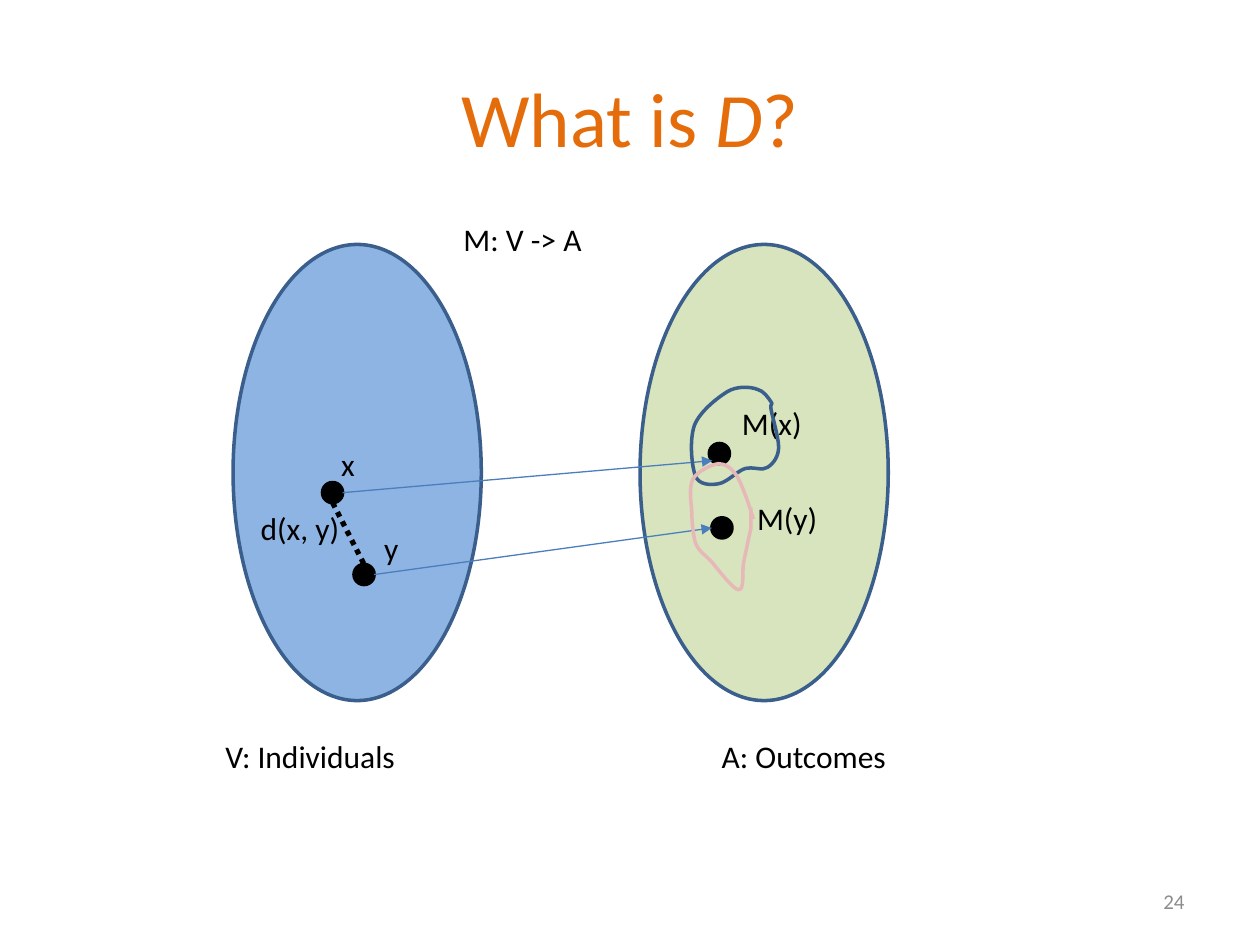
"""Build the slide that maps individuals V to outcomes A."""
import dataclasses

import lxml.etree
import pptx
import pptx.dml.color
import pptx.enum.dml
import pptx.enum.shapes
import pptx.enum.text
import pptx.oxml.ns
import pptx.util

ALIGN = pptx.enum.text.PP_ALIGN
ANCHOR = pptx.enum.text.MSO_ANCHOR
COLUMNS, ROWS = 100, 75
SLIDE_WIDTH, SLIDE_HEIGHT = pptx.util.Inches(10), pptx.util.Inches(7.5)
LABEL_HEIGHT, DOT_SIZE = 4, 1.6

CLOUD_X = [
    (6.9, 11.7),
    (6.1, 12.2), (4.7, 13.3), (4.3, 14.4),
    (3.9, 15.6), (4.1, 17.6), (4.4, 18.4),
    (4.7, 19.1), (5.6, 19.1), (6.2, 19),
    (6.9, 18.9), (7.7, 18), (8.3, 17.8),
    (9, 17.6), (9.7, 18), (10.1, 17.7),
    (10.6, 17.4), (11, 16.8), (11, 16.1),
    (11, 15.3), (10.5, 13.7), (10.4, 13.1),
    (10.3, 12.5), (10.6, 12.8), (10.4, 12.5),
    (10.2, 12.2), (9.8, 11.6), (9.3, 11.5),
    (8.8, 11.3), (7.7, 11.2), (6.9, 11.7),
]
CLOUD_Y = [
    (9, 21.8),
    (8.6, 20.5), (8.1, 19.1), (7.7, 18.4),
    (7.2, 17.7), (6.8, 17.4), (6.2, 17.4),
    (5.6, 17.5), (4.6, 18), (4.2, 18.6),
    (3.9, 19.2), (4, 20.2), (4.1, 21),
    (4.1, 21.9), (4.2, 23), (4.4, 23.7),
    (4.7, 24.4), (5, 24.5), (5.6, 25.1),
    (6.2, 25.8), (7.4, 27.4), (7.8, 27.4),
    (8.3, 27.5), (8.1, 26), (8.2, 25.4),
    (8.3, 24.8), (8.4, 24.4), (8.5, 23.9),
    (8.6, 23.4), (8.7, 23), (8.8, 22.5),
    (8.8, 22), (8.8, 20.9), (8.8, 20.9),
]


@dataclasses.dataclass(frozen=True)
class Theme:
    """Colours, type sizes and line widths of the slide."""
    font: str = "Calibri"
    title: str = "E46C0A"
    ink: str = "000000"
    muted: str = "8C8C8C"
    domain: str = "8EB4E3"
    range: str = "D7E4BD"
    outline: str = "3A5F8C"
    arrow: str = "4B7EBC"
    pink: str = "E6B9B8"
    title_size: float = 44
    label_size: float = 18
    number_size: float = 12
    outline_width: float = 2
    arrow_width: float = 0.75
    distance_width: float = 3


@dataclasses.dataclass(frozen=True)
class Box:
    """A region measured in grid columns and rows."""
    left: float
    top: float
    width: float
    height: float

    def inside(self, left, top, width, height):
        """Return a box offset from this box's corner."""
        return Box(self.left + left, self.top + top, width, height)

    def at(self, across, down):
        """Return the point at the given shares of this box."""
        return self.left + across * self.width, self.top + down * self.height

    def emu(self):
        """Return left, top, width and height in slide units."""
        return *to_emu(self.left, self.top), *to_emu(self.width, self.height)


THEME = Theme()


def to_emu(column, row):
    """Convert a grid position to slide units."""
    return round(column * SLIDE_WIDTH / COLUMNS), round(row * SLIDE_HEIGHT / ROWS)


def rgb(colour):
    """Return a colour object for a hex value."""
    return pptx.dml.color.RGBColor.from_string(colour)


def add_text(slide, box, runs, size=THEME.label_size, colour=THEME.ink,
             align=ALIGN.LEFT, anchor=ANCHOR.TOP):
    """Write (text, italic) runs in one paragraph and return the frame."""
    frame = slide.shapes.add_textbox(*box.emu()).text_frame
    frame.word_wrap = True
    frame.vertical_anchor = anchor
    paragraph = frame.paragraphs[0]
    paragraph.alignment = align
    for text, italic in runs:
        run = paragraph.add_run()
        run.text = text
        run.font.name = THEME.font
        run.font.size = pptx.util.Pt(size)
        run.font.italic = italic
        run.font.color.rgb = rgb(colour)
    return frame


def add_label(slide, region, left, top, width, text):
    """Place a one-line label relative to a region."""
    frame = add_text(slide, region.inside(left, top, width, LABEL_HEIGHT), [(text, False)])
    frame.auto_size = pptx.enum.text.MSO_AUTO_SIZE.SHAPE_TO_FIT_TEXT


def set_line(line, colour, width):
    """Set a line's colour and width."""
    line.color.rgb = rgb(colour)
    line.width = pptx.util.Pt(width)


def add_ellipse(slide, box, fill, outline):
    """Draw a filled ellipse."""
    ellipse = slide.shapes.add_shape(pptx.enum.shapes.MSO_SHAPE.OVAL, *box.emu())
    ellipse.shadow.inherit = False
    ellipse.fill.solid()
    ellipse.fill.fore_color.rgb = rgb(fill)
    set_line(ellipse.line, outline, THEME.outline_width)


def add_line(slide, start, end, colour, width):
    """Draw a straight connector and return it."""
    connector = slide.shapes.add_connector(
        pptx.enum.shapes.MSO_CONNECTOR.STRAIGHT, *to_emu(*start), *to_emu(*end))
    set_line(connector.line, colour, width)
    lxml.etree.SubElement(connector._element.spPr, pptx.oxml.ns.qn("a:effectLst"))
    return connector


def bend_segments(freeform):
    """Turn each three line segments into one cubic Bezier curve."""
    segments = list(freeform._element.iter(pptx.oxml.ns.qn("a:lnTo")))
    for first, second, third in zip(segments[::3], segments[1::3], segments[2::3]):
        curve = lxml.etree.Element(pptx.oxml.ns.qn("a:cubicBezTo"))
        first.addprevious(curve)
        for segment in (first, second, third):
            curve.append(segment[0])
            segment.getparent().remove(segment)


def add_cloud(slide, region, points, colour, close):
    """Draw a curved outline relative to a region."""
    outline = [to_emu(region.left + x, region.top + y) for x, y in points]
    builder = slide.shapes.build_freeform(*outline[0])
    builder.add_line_segments(outline[1:], close=close)
    cloud = builder.convert_to_shape()
    bend_segments(cloud)
    cloud.shadow.inherit = False
    cloud.fill.background()
    set_line(cloud.line, colour, THEME.outline_width)


def add_set(slide, region, fill, dot_corners, labels):
    """Draw a set with its elements and labels, and return the element boxes."""
    add_ellipse(slide, region, fill, THEME.outline)
    dots = [region.inside(*corner, DOT_SIZE, DOT_SIZE) for corner in dot_corners]
    for dot in dots:
        add_ellipse(slide, dot, THEME.ink, THEME.ink)
    for label in labels:
        add_label(slide, region, *label)
    return dots


def add_mapping(slide, sources, arrivals):
    """Draw the arrows from the sources and the distance between them."""
    for source, arrival in zip(sources, arrivals):
        arrow = add_line(slide, source.at(1, 0.5), arrival, THEME.arrow, THEME.arrow_width)
        lxml.etree.SubElement(arrow.line._get_or_add_ln(), pptx.oxml.ns.qn("a:tailEnd"), type="triangle")
    x, y = sources
    distance = add_line(slide, x.at(0.5, 1), y.at(0.5, 0), THEME.ink, THEME.distance_width)
    distance.line.dash_style = pptx.enum.dml.MSO_LINE.ROUND_DOT


def add_diagram(slide, region):
    """Draw both sets and the mapping between them."""
    individuals = region.inside(0, 0, 19.7, region.height)
    outcomes = region.inside(32.3, 0, 19.7, region.height)
    sources = add_set(
        slide, individuals, THEME.domain, [(7.1, 18.9), (9.6, 25.4)],
        [(-1.6, 38.6, 19.7, "V: Individuals"), (7.6, 15.4, 5.5, "x"),
         (11, 22.1, 3.1, "y"), (1.2, 20.5, 14.2, "d(x, y)")])
    m_x, m_y = add_set(
        slide, outcomes, THEME.range, [(5.5, 15.8), (5.7, 21.7)],
        [(5.5, 38.6, 19.7, "A: Outcomes"), (7.1, 12.2, 11.1, "M(x)"),
         (8.3, 19.7, 11.1, "M(y)")])
    add_label(slide, region, 17.3, -2.4, 15.7, "M: V -> A")
    add_mapping(slide, sources, [m_x.at(0.15, 0.85), m_y.at(0, 0.5)])
    add_cloud(slide, outcomes, CLOUD_X, THEME.outline, close=True)
    add_cloud(slide, outcomes, CLOUD_Y, THEME.pink, close=False)


def main():
    """Build and save the slide."""
    deck = pptx.Presentation()
    deck.slide_width, deck.slide_height = SLIDE_WIDTH, SLIDE_HEIGHT
    slide = deck.slides.add_slide(deck.slide_layouts[6])
    add_text(slide, Box(71.7, 69.5, 23.3, 4), [("24", False)],
             THEME.number_size, THEME.muted, ALIGN.RIGHT, ANCHOR.MIDDLE)
    add_text(slide, Box(5, 3, 90, 12.5), [("What is ", False), ("D", True), ("?", False)],
             THEME.title_size, THEME.title, ALIGN.CENTER, ANCHOR.MIDDLE)
    add_diagram(slide, Box(18.5, 19.4, 52, 36.2))
    deck.save("out.pptx")


if __name__ == "__main__":
    main()
